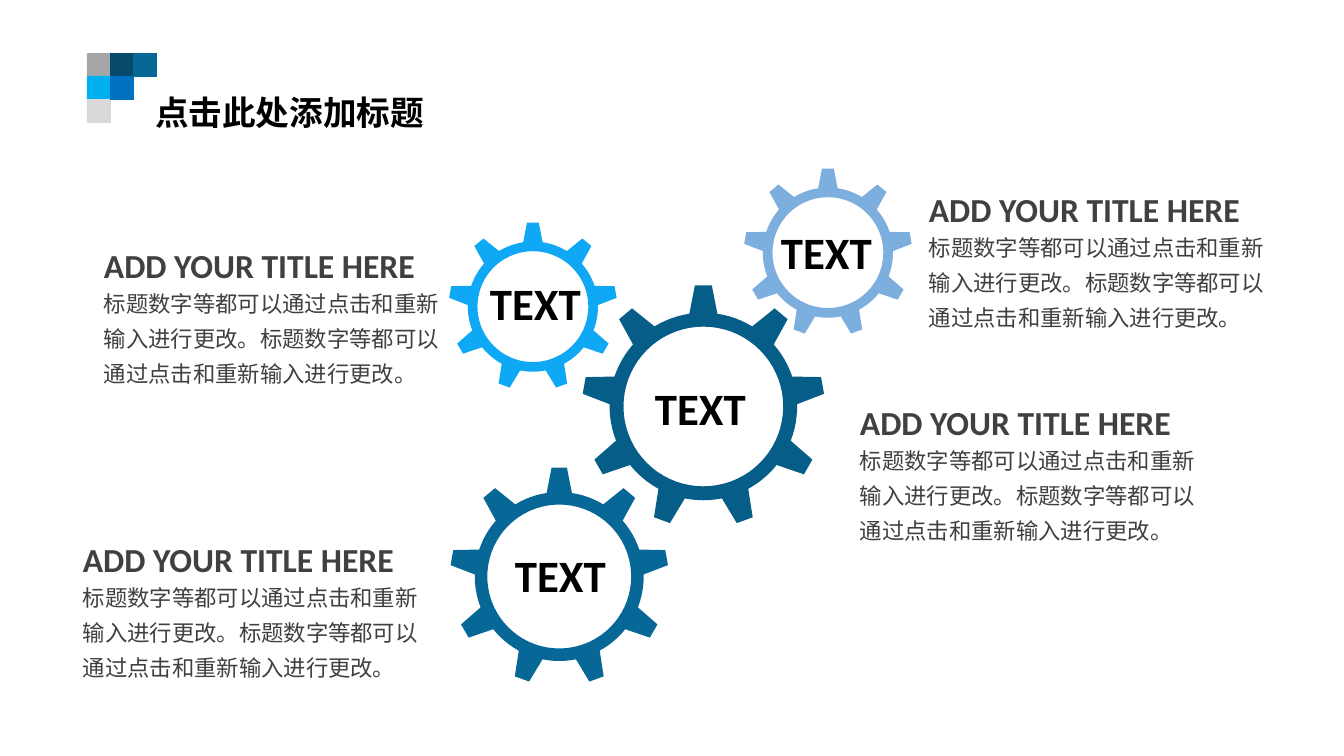
import math

import pptx
import pptx.dml.color
import pptx.enum.text
import pptx.oxml.ns
import pptx.util
from lxml import etree

PX = 9144000 / 1008  # EMU in one px
SLIDE_SIZE = (1344, 756)

TITLE = "点击此处添加标题"
HEADING = "ADD YOUR TITLE HERE"
BODY = "标题数字等都可以通过点击和重新输入进行更改。标题数字等都可以通过点击和重新输入进行更改。"
GEAR_LABEL = "TEXT"
LATIN, CHINESE = "Calibri", "Noto Sans CJK SC"
BLACK, GREY = "000000", "404040"

# column, row, colour
SQUARES = [
    (0, 0, "A6A6A6"), (1, 0, "05496B"), (2, 0, "076797"),
    (0, 1, "00B0F0"), (0, 2, "D9D9D9"), (1, 1, "0070C0"),
]
# centre x, centre y, radius, label left, label top, colour
GEARS = [
    (827, 253, 84, 771, 220, "7CAFDE"),
    (702, 407, 121, 645, 376, "065D88"),
    (532, 307, 84, 480, 271, "0FA8F5"),
    (558, 577, 109, 505, 543, "076797"),
]
# left, top
NOTES = [(919, 184), (850, 397), (73, 534), (94, 240)]

# gear proportions, as parts of the outer radius
TEETH = 9
HOLE, RING = 0.66, 0.775
TIP_HALF, BASE_HALF = 0.07, 0.116


def emu(px):
    return round(px * PX)


def color(value):
    return pptx.dml.color.RGBColor.from_string(value)


def paint(shape, fill):
    shape.fill.solid()
    shape.fill.fore_color.rgb = color(fill)
    shape.line.fill.background()
    shape.shadow.inherit = False


def write(box, text, size, font, ink, bold=True, spacing=None):
    frame = box.text_frame
    frame.word_wrap = True
    frame.auto_size = pptx.enum.text.MSO_AUTO_SIZE.SHAPE_TO_FIT_TEXT
    frame.vertical_anchor = pptx.enum.text.MSO_ANCHOR.TOP
    para = frame.paragraphs[0]
    para.alignment = pptx.enum.text.PP_ALIGN.LEFT
    para.line_spacing = spacing
    span = para.add_run()
    span.text = text
    span.font.size = pptx.util.Pt(size)
    span.font.bold = bold
    span.font.name = font
    span.font.color.rgb = color(ink)
    east_asian = etree.SubElement(span.font._element, pptx.oxml.ns.qn("a:ea"))
    east_asian.set("typeface", font)


def add_text(page, left, top, width, height, *style, **options):
    box = page.shapes.add_textbox(emu(left), emu(top), emu(width), emu(height))
    write(box, *style, **options)


def circle(radius, start, end, steps):
    """Points along an arc, with angles in radians clockwise from the top."""
    angles = [start + (end - start) * i / steps for i in range(steps + 1)]
    return [(radius * math.sin(a), -radius * math.cos(a)) for a in angles]


def gear_outline():
    """Points of the toothed edge for an outer radius of 1."""
    points = []
    pitch = 2 * math.pi / TEETH
    base_angle = math.asin(BASE_HALF / RING)
    for tooth in range(TEETH):
        turn = tooth * pitch
        for x, y in [(-TIP_HALF, -1), (TIP_HALF, -1)]:
            points.append((x * math.cos(turn) - y * math.sin(turn),
                           x * math.sin(turn) + y * math.cos(turn)))
        points += circle(RING, turn + base_angle, turn + pitch - base_angle, 6)
    return points


def add_gear(page, center_x, center_y, radius, fill):
    def place(points):
        return [(emu(center_x + radius * x), emu(center_y + radius * y)) for x, y in points]

    edge = place(gear_outline())
    hole = place(circle(HOLE, 0, -2 * math.pi, 72))
    builder = page.shapes.build_freeform(*edge[0], scale=1.0)
    builder.add_line_segments(edge[1:], close=True)
    builder.move_to(*hole[0])
    builder.add_line_segments(hole[1:], close=True)
    gear = builder.convert_to_shape()
    gear.rotation = 320
    paint(gear, fill)


def main():
    deck = pptx.Presentation()
    deck.slide_width, deck.slide_height = map(emu, SLIDE_SIZE)
    page = deck.slides.add_slide(deck.slide_layouts[5])

    for column, row, fill in SQUARES:
        square = page.shapes.add_shape(
            pptx.enum.shapes.MSO_SHAPE.RECTANGLE,
            emu(87 + 23 * column), emu(53 + 23 * row), emu(24), emu(24))
        paint(square, fill)

    title = page.shapes.title
    title.left, title.top, title.width, title.height = map(emu, (145, 87, 314, 50))
    write(title, TITLE, 24, CHINESE, BLACK)

    for center_x, center_y, radius, left, top, fill in GEARS:
        add_gear(page, center_x, center_y, radius, fill)
        add_text(page, left, top, 126, 65, GEAR_LABEL, 32, LATIN, BLACK)

    for left, top in NOTES:
        add_text(page, left, top, 408, 50, HEADING, 24, LATIN, GREY)
        add_text(page, left, top + 37, 358, 151, BODY, 16, CHINESE, GREY,
                 bold=False, spacing=1.3)

    deck.save("out.pptx")


if __name__ == "__main__":
    main()
